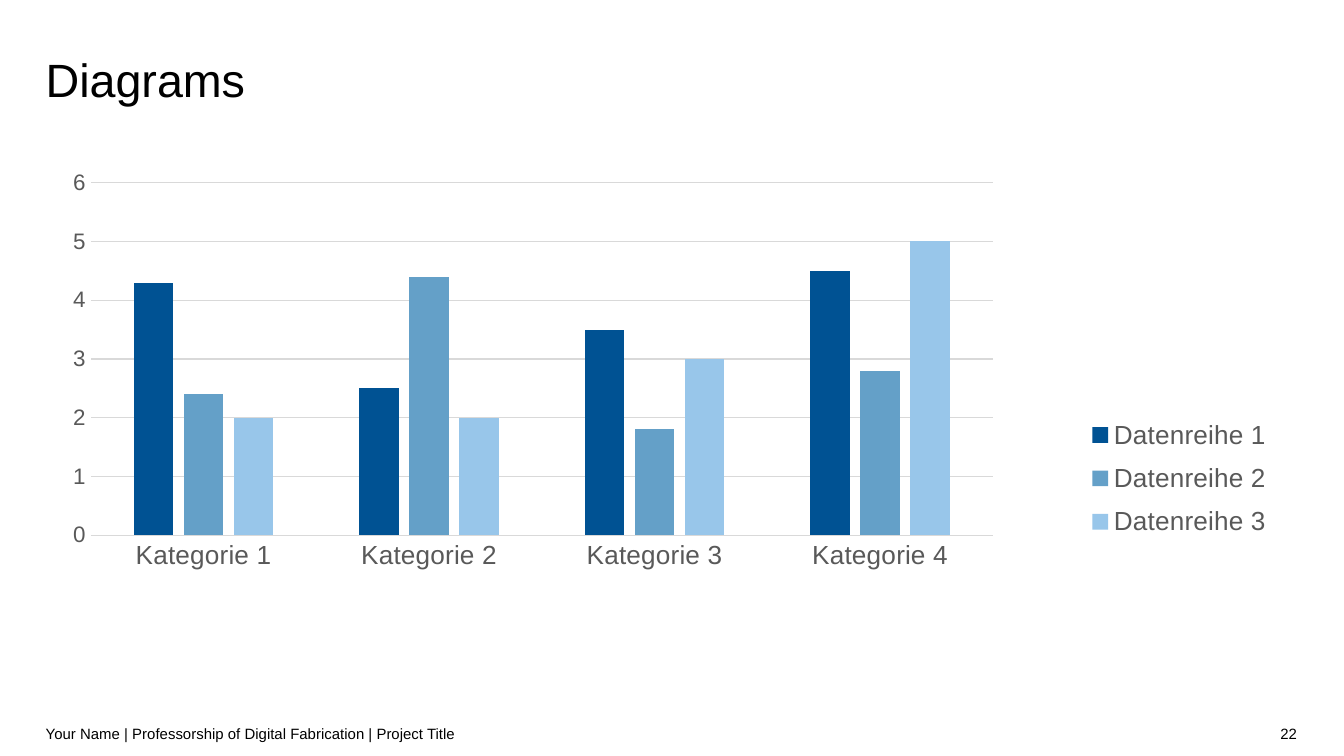
import pptx
import pptx.chart.data
import pptx.dml.color
import pptx.enum.chart
import pptx.enum.text
import pptx.oxml
import pptx.oxml.ns
import pptx.util

WIDTH = 10
HEIGHT = WIDTH * 9 / 16
MARGIN = 0.34
CONTENT_WIDTH = 9.31
FOOTER_TOP, FOOTER_HEIGHT = 5.31, 0.3
NUMBER_WIDTH = 2.24
BLACK, TEXT_GREY, LINE_GREY = "000000", "595959", "D9D9D9"
Inches, Pt = pptx.util.Inches, pptx.util.Pt
color = pptx.dml.color.RGBColor.from_string

deck = pptx.Presentation()
deck.slide_width, deck.slide_height = Inches(WIDTH), Inches(HEIGHT)
page = deck.slides.add_slide(deck.slide_layouts[6])


def add_text(text, left, top, width, height, size, inset=0, line=None,
             align="LEFT", anchor="TOP"):
    box = page.shapes.add_textbox(*map(Inches, (left, top, width, height)))
    frame = box.text_frame
    frame.word_wrap = True
    frame.margin_left = frame.margin_right = 0
    frame.margin_top = frame.margin_bottom = Inches(inset)
    frame.vertical_anchor = pptx.enum.text.MSO_ANCHOR[anchor]
    para = frame.paragraphs[0]
    para.alignment = pptx.enum.text.PP_ALIGN[align]
    if line:
        para.line_spacing = Pt(line)
    span = para.add_run()
    span.text = text
    span.font.name, span.font.size = "Arial", Pt(size)
    span.font.color.rgb = color(BLACK)


def manual_layout(x, y, w, h, inner=False):
    """Return a c:layout element; lengths are shares of the chart's size."""
    target = '<c:layoutTarget val="inner"/>' if inner else ""
    lengths = "".join(f'<c:{name} val="{value}"/>'
                      for name, value in zip("xywh", (x, y, w, h)))
    return pptx.oxml.parse_xml(
        f'<c:layout {pptx.oxml.ns.nsdecls("c")}><c:manualLayout>{target}'
        '<c:xMode val="edge"/><c:yMode val="edge"/>'
        f'{lengths}</c:manualLayout></c:layout>')


# Title
add_text("Diagrams", MARGIN, 0.35, CONTENT_WIDTH, 0.42, 25, line=32)

# Column chart
series_rows = [
    ("Datenreihe 1", (4.3, 2.5, 3.5, 4.5), "005293"),
    ("Datenreihe 2", (2.4, 4.4, 1.8, 2.8), "64A0C8"),
    ("Datenreihe 3", (2, 2, 3, 5), "98C6EA"),
]
chart_data = pptx.chart.data.CategoryChartData()
chart_data.categories = [f"Kategorie {number}" for number in range(1, 5)]
for name, values, _ in series_rows:
    chart_data.add_series(name, values)
chart = page.shapes.add_chart(
    pptx.enum.chart.XL_CHART_TYPE.COLUMN_CLUSTERED,
    *map(Inches, (0.35, 1.18, CONTENT_WIDTH, 3.69)), chart_data).chart
chart.has_title = False
chart.has_legend = True
chart.legend.position = pptx.enum.chart.XL_LEGEND_POSITION.BOTTOM
chart.legend.include_in_layout = False

plot = chart.plots[0]
plot.gap_width, plot.overlap = 219, -27
plot.vary_by_categories = False
for series, (_, _, fill) in zip(plot.series, series_rows):
    series.format.fill.solid()
    series.format.fill.fore_color.rgb = color(fill)

category_axis, value_axis = chart.category_axis, chart.value_axis
value_axis.minimum_scale, value_axis.maximum_scale = 0, 6
value_axis.major_unit = 1
value_axis.has_major_gridlines = True
for axis in (category_axis, value_axis):
    axis.major_tick_mark = pptx.enum.chart.XL_TICK_MARK.NONE
    axis.minor_tick_mark = pptx.enum.chart.XL_TICK_MARK.NONE
value_axis.format.line.fill.background()
for line in (category_axis.format.line, value_axis.major_gridlines.format.line):
    line.color.rgb = color(LINE_GREY)
    line.width = Pt(0.75)

for font, size, shade in (
        (chart.font, 10, BLACK),
        (category_axis.tick_labels.font, 14, TEXT_GREY),
        (value_axis.tick_labels.font, 12, TEXT_GREY),
        (chart.legend.font, 14, TEXT_GREY)):
    font.name, font.size = "Arial", Pt(size)
    font.color.rgb = color(shade)

plot_area = chart.element.find(".//" + pptx.oxml.ns.qn("c:plotArea"))
for layout in plot_area.findall(pptx.oxml.ns.qn("c:layout")):
    plot_area.remove(layout)
plot_area.insert(0, manual_layout(0.035, 0.049, 0.721, 0.711, inner=True))

legend = chart.element.find(".//" + pptx.oxml.ns.qn("c:legend"))
for layout in legend.findall(pptx.oxml.ns.qn("c:layout")):
    legend.remove(layout)
legend.find(pptx.oxml.ns.qn("c:legendPos")).addnext(
    manual_layout(0.82, 0.5, 0.17, 0.29))

# Footer
footer_width = CONTENT_WIDTH - NUMBER_WIDTH
add_text("Your Name | Professorship of Digital Fabrication | Project Title",
         MARGIN, FOOTER_TOP, footer_width, FOOTER_HEIGHT, 8,
         inset=0.05, anchor="MIDDLE")
add_text("22", MARGIN + footer_width, FOOTER_TOP, NUMBER_WIDTH, FOOTER_HEIGHT, 8,
         inset=0.05, align="RIGHT", anchor="MIDDLE")

deck.save("out.pptx")
